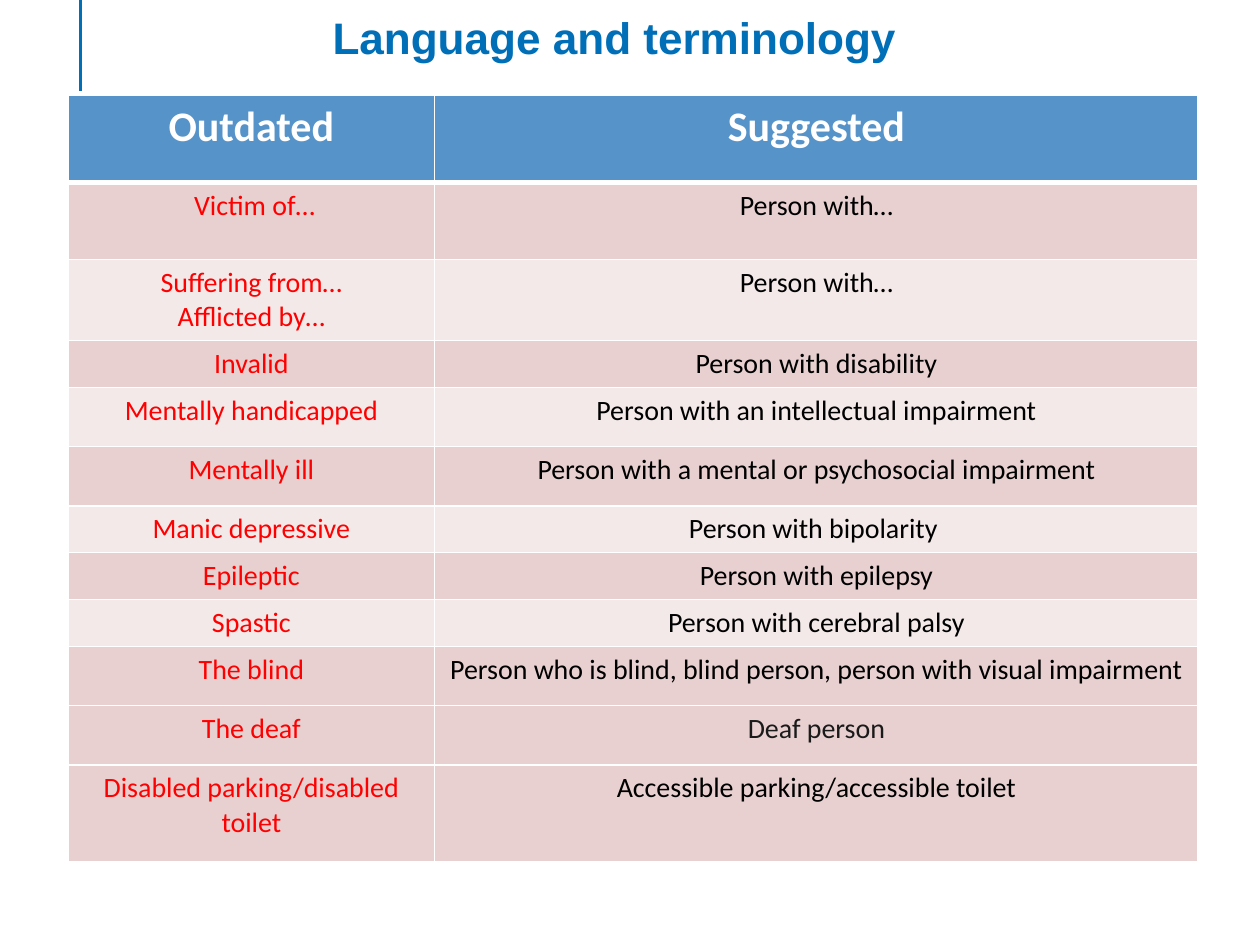
from lxml import etree
from pptx import Presentation
from pptx.dml.color import RGBColor
from pptx.enum.shapes import MSO_CONNECTOR
from pptx.enum.text import MSO_ANCHOR, PP_ALIGN
from pptx.oxml import parse_xml
from pptx.oxml.ns import qn
from pptx.util import Inches, Pt

LINE = MSO_CONNECTOR.STRAIGHT
CENTER = PP_ALIGN.CENTER
MIDDLE = MSO_ANCHOR.MIDDLE

BLUE = RGBColor(0x00, 0x6F, 0xB7)
HEADER = RGBColor(0x56, 0x93, 0xC9)
PINK = RGBColor(0xE8, 0xD0, 0xD0)
PALE = RGBColor(0xF4, 0xE9, 0xE9)
RED = RGBColor(0xFF, 0x00, 0x00)
BLACK = RGBColor(0x00, 0x00, 0x00)
CHARCOAL = RGBColor(0x1A, 0x1A, 0x1A)
WHITE = RGBColor(0xFF, 0xFF, 0xFF)

A_NS = "http://schemas.openxmlformats.org/drawingml/2006/main"
SINGLE, MEDIUM, TALL = 0.37, 0.47, 0.62
COLUMN_WIDTHS = (2.91, 6.06)
HEADINGS = ("Outdated", "Suggested")
HEADER_HEIGHT = 0.69
TERMS = [
    (" Victim of…", "Person with…", 0.61, PINK),
    ("Suffering from…\nAfflicted by…", "Person with…", 0.63, PALE),
    ("Invalid", "Person with disability", SINGLE, PINK),
    ("Mentally handicapped", "Person with an intellectual impairment", MEDIUM, PALE),
    ("Mentally ill", "Person with a mental or psychosocial impairment", MEDIUM, PINK),
    ("Manic depressive", "Person with bipolarity ", SINGLE, PALE),
    ("Epileptic", "Person with epilepsy", SINGLE, PINK),
    ("Spastic", "Person with cerebral palsy", SINGLE, PALE),
    ("The blind", "Person who is blind, blind person, person with visual impairment",
     MEDIUM, PINK),
    ("The deaf", "Deaf person", MEDIUM, PINK),
    ("Disabled parking/disabled toilet", "Accessible parking/accessible toilet",
     0.77, PINK),
]


def write(tf, text, font="Calibri", size=16, color=BLACK, bold=False):
    """Fill a text frame with centred paragraphs, one for each line of text."""
    for i, line in enumerate(text.split("\n")):
        p = tf.paragraphs[0] if i == 0 else tf.add_paragraph()
        p.alignment = CENTER
        r = p.add_run()
        r.text = line
        r.font.name, r.font.size, r.font.bold = font, Pt(size), bold
        r.font.color.rgb = color


def set_borders(cell, top=1, bottom=1):
    """Give a cell white borders, with widths in points."""
    tcPr = cell._tc.get_or_add_tcPr()
    for side, width in (("L", 1), ("R", 1), ("T", top), ("B", bottom)):
        tcPr.append(parse_xml(
            f'<a:ln{side} xmlns:a="{A_NS}" w="{Pt(width)}"><a:solidFill>'
            f'<a:srgbClr val="{WHITE}"/></a:solidFill></a:ln{side}>'))


def add_accent_line(s, x, top, bottom):
    """Draw the vertical blue line beside the title."""
    line = s.shapes.add_connector(LINE, Inches(x), Inches(top), Inches(x), Inches(bottom))
    line.line.color.rgb = BLUE
    line.line.width = Pt(2)
    etree.SubElement(line._element.spPr, qn("a:effectLst"))


def add_title(s, text, left, top, width, height):
    """Place and format the title placeholder."""
    sp = s.shapes.title
    sp.left, sp.top, sp.width, sp.height = map(Inches, (left, top, width, height))
    tf = sp.text_frame
    tf.word_wrap = True
    tf.vertical_anchor = MIDDLE
    write(tf, text, font="Arial", size=25.2, color=BLUE, bold=True)


def add_terms_table(s, left, top):
    """Build the table of outdated and suggested terms."""
    heights = [HEADER_HEIGHT] + [height for _, _, height, _ in TERMS]
    table = s.shapes.add_table(
        len(heights), len(COLUMN_WIDTHS), Inches(left), Inches(top),
        Inches(sum(COLUMN_WIDTHS)), Inches(sum(heights))).table
    for column, width in zip(table.columns, COLUMN_WIDTHS):
        column.width = Inches(width)
    for row, height in zip(table.rows, heights):
        row.height = Inches(height)
    for c, heading in enumerate(HEADINGS):
        cell = table.cell(0, c)
        set_borders(cell, bottom=3)
        cell.fill.solid()
        cell.fill.fore_color.rgb = HEADER
        write(cell.text_frame, heading, size=24, color=WHITE, bold=True)
    for n, (outdated, suggested, _, fill) in enumerate(TERMS, start=1):
        ink = CHARCOAL if suggested == "Deaf person" else BLACK
        for c, (text, color) in enumerate(((outdated, RED), (suggested, ink))):
            cell = table.cell(n, c)
            set_borders(cell, top=3 if n == 1 else 1)
            cell.fill.solid()
            cell.fill.fore_color.rgb = fill
            write(cell.text_frame, text, color=color)


def main():
    """Build the slide and save it."""
    prs = Presentation()
    prs.slide_width, prs.slide_height = Inches(10), Inches(7.5)
    s = prs.slides.add_slide(prs.slide_layouts[5])
    add_accent_line(s, 0.64, 0, 0.72)
    add_title(s, "Language and terminology", 0.29, 0, 9.17, 0.58)
    add_terms_table(s, 0.54, 0.76)
    prs.save("out.pptx")


if __name__ == "__main__":
    main()
